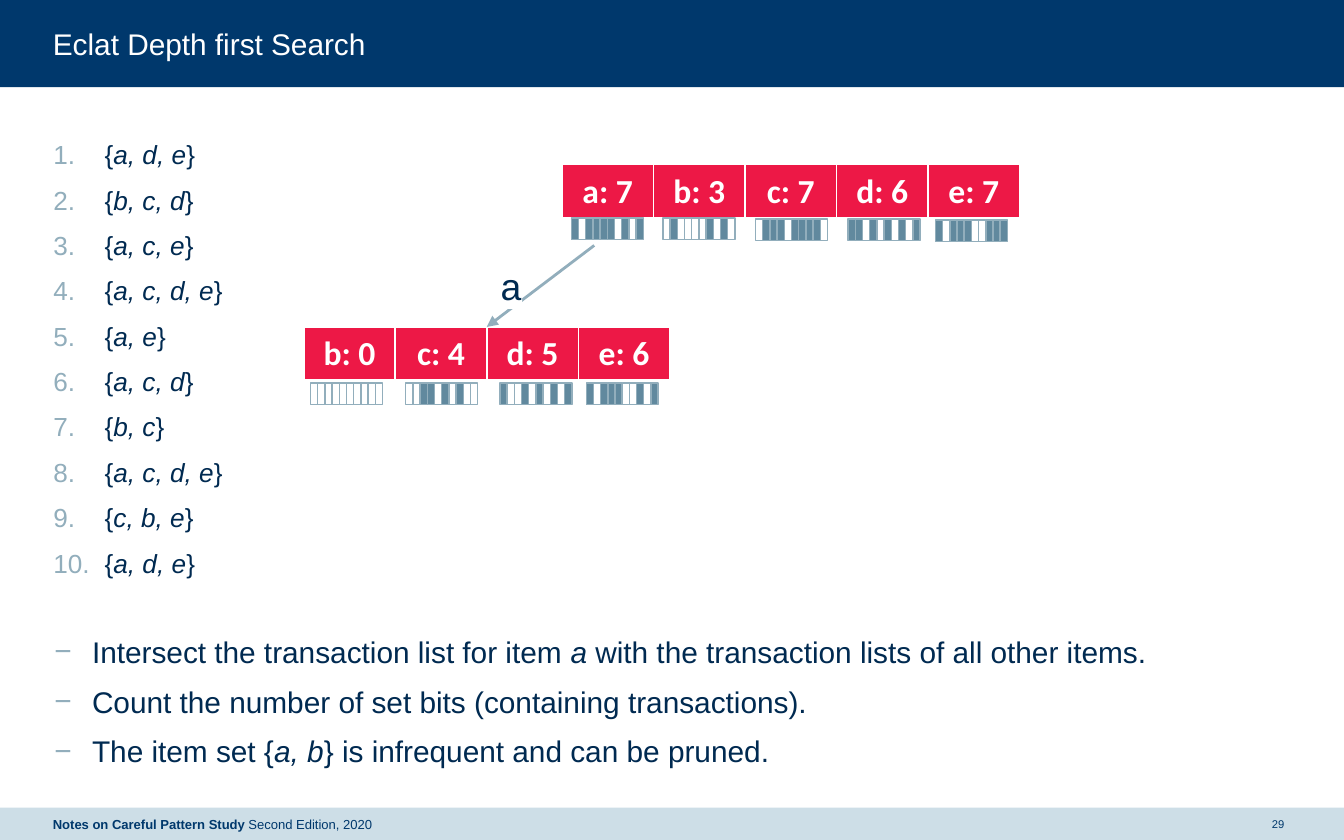
"""Build the slide on depth-first search with the Eclat algorithm."""
from lxml import etree
from pptx import Presentation
from pptx import util as u
from pptx.dml.color import RGBColor
from pptx.enum import shapes, text
from pptx.oxml import parse_xml
from pptx.oxml.ns import nsdecls, qn

NAVY = RGBColor(0x00, 0x38, 0x6C)
INK = RGBColor(0x00, 0x2A, 0x51)
PALE = RGBColor(0xCD, 0xDE, 0xE7)
STEEL = RGBColor(0x92, 0xAE, 0xBC)
BAR = RGBColor(0x61, 0x89, 0x9E)
RED = RGBColor(0xED, 0x18, 0x46)
WHITE = RGBColor(0xFF, 0xFF, 0xFF)

TRANSACTIONS = ["a, d, e", "b, c, d", "a, c, e", "a, c, d, e", "a, e",
                "a, c, d", "b, c", "a, c, d, e", "c, b, e", "a, d, e"]
REMARKS = [
    "Intersect the transaction list for item |a |with the transaction lists of all other items.",
    "Count the number of set bits (containing transactions).",
    "The item set {|a, b|} is infrequent and can be pruned.",
]
NUMBERED = {"mark": '<a:buAutoNum type="arabicPeriod" {}/>', "margin": u.Cm(0.97),
            "hanging": u.Cm(0.97), "size": u.Pt(14)}
DASHED = {"mark": '<a:buChar char="−" {}/>', "margin": u.Cm(0.73),
          "hanging": u.Cm(0.71), "size": u.Pt(16)}


def write(para, marked, color, accent="italic", **font):
    """Add text to a paragraph; parts between bars get the accent."""
    for index, part in enumerate(marked.split("|")):
        if not part:
            continue
        span = para.add_run()
        span.text = part
        span.font.color.rgb = color
        values = {"name": "Arial", **font}
        if index % 2:
            values[accent] = True
        for name, value in values.items():
            setattr(span.font, name, value)


def set_frame(shape, place, **values):
    """Place a text shape and format its frame without margins."""
    for name, value in zip(("left", "top", "width", "height"), place):
        setattr(shape, name, u.Cm(value))
    margins = {f"margin_{side}": 0 for side in ("left", "top", "right", "bottom")}
    for name, value in {"word_wrap": True, **margins, **values}.items():
        setattr(shape.text_frame, name, value)
    return shape.text_frame


deck = Presentation()
deck.slide_width, deck.slide_height = u.Cm(25.4), u.Cm(15.88)
page = deck.slides.add_slide(deck.slide_layouts[5])
title = page.shapes.title

for top, height, color in [(0, 1.65, NAVY), (15.27, 0.61, PALE)]:
    band = page.shapes.add_shape(shapes.MSO_SHAPE.RECTANGLE, 0, u.Cm(top),
                                 deck.slide_width, u.Cm(height))
    band.shadow.inherit = False
    band.fill.solid()
    band.fill.fore_color.rgb = color
    band.line.fill.background()
    title._element.addprevious(band._element)

frame = set_frame(title, (1, 0.48, 23.42, 0.69), vertical_anchor=text.MSO_ANCHOR.TOP)
frame.paragraphs[0].alignment = text.PP_ALIGN.LEFT
write(frame.paragraphs[0], "Eclat Depth first Search", WHITE, size=u.Pt(16))

footers = [
    ((1, 15.26, 11.15, 0.65), "|Notes on Careful Pattern Study |Second Edition, 2020",
     7, text.PP_ALIGN.LEFT),
    ((23.9, 15.26, 0.51, 0.65), "29", 6, text.PP_ALIGN.CENTER),
]
for place, words, size, alignment in footers:
    box = page.shapes.add_textbox(0, 0, 0, 0)
    frame = set_frame(box, place, vertical_anchor=text.MSO_ANCHOR.MIDDLE)
    frame.paragraphs[0].alignment = alignment
    write(frame.paragraphs[0], words, NAVY, "bold", size=u.Pt(size))

frame = set_frame(page.shapes.add_textbox(0, 0, 0, 0), (1.01, 2.62, 23.27, 11.86))
lines = [(f"{{|{items}|}}", NUMBERED) for items in TRANSACTIONS]
lines += [(remark, DASHED) for remark in REMARKS]
for index, (words, style) in enumerate(lines):
    para = frame.paragraphs[0] if index == 0 else frame.add_paragraph()
    para.space_before = u.Pt(29.5 if index == len(TRANSACTIONS) else 7.5)
    properties = para._p.get_or_add_pPr()
    properties.set("marL", str(style["margin"]))
    properties.set("indent", str(-style["hanging"]))
    properties.append(parse_xml(
        f'<a:buClr {nsdecls("a")}><a:srgbClr val="{STEEL}"/></a:buClr>'))
    properties.append(parse_xml(f'<a:buFont {nsdecls("a")} typeface="Arial"/>'))
    properties.append(parse_xml(style["mark"].format(nsdecls("a"))))
    write(para, words, INK, size=style["size"])

bits = {item: [item in items for items in TRANSACTIONS] for item in "abcde"}
shared = {item: [x and y for x, y in zip(bits["a"], bits[item])] for item in "bcde"}
levels = [
    (bits, 10.62, 3.11, [(10.8, 4.12), (12.53, 4.12), (14.28, 4.14), (16.03, 4.14), (17.68, 4.16)]),
    (shared, 5.74, 6.18, [(5.87, 7.24), (7.67, 7.24), (9.45, 7.24), (11.08, 7.24)]),
]
pitch = u.Cm(1.36) // 10
for level, left, top, strips in levels:
    table = page.shapes.add_table(1, len(level), u.Cm(left), u.Cm(top),
                                  u.Cm(1.73) * len(level), u.Cm(1.04)).table
    for column, (item, flags) in enumerate(level.items()):
        table.columns[column].width = u.Cm(1.73)
        cell = table.cell(0, column)
        para = cell.text_frame.paragraphs[0]
        para.alignment = text.PP_ALIGN.CENTER
        write(para, f"{item}: {sum(flags)}", WHITE, name="Calibri", size=u.Pt(18), bold=True)
        cell.fill.solid()
        cell.fill.fore_color.rgb = RED
        for place, (side, points) in enumerate([("L", 1), ("R", 1), ("T", 1), ("B", 3)]):
            cell._tc.tcPr.insert(place, parse_xml(
                f'<a:ln{side} {nsdecls("a")} w="{u.Pt(points)}"><a:solidFill>'
                f'<a:srgbClr val="{WHITE}"/></a:solidFill></a:ln{side}>'))

    for flags, (strip_left, strip_top) in zip(level.values(), strips):
        strip = page.shapes.add_group_shape()
        for index, flag in enumerate(flags):
            bit = strip.shapes.add_shape(
                shapes.MSO_SHAPE.RECTANGLE, u.Cm(strip_left) + index * pitch,
                u.Cm(strip_top), pitch, u.Cm(0.41))
            bit.shadow.inherit = False
            bit.line.color.rgb = STEEL
            bit.line.width = u.Pt(0.75)
            if flag:
                bit.fill.solid()
                bit.fill.fore_color.rgb = BAR
            else:
                bit.fill.background()

arrow = page.shapes.add_connector(shapes.MSO_CONNECTOR.STRAIGHT, u.Cm(11.23), u.Cm(4.64),
                                  u.Cm(9.2), u.Cm(6.18))
arrow.line.color.rgb = STEEL
arrow.line.width = u.Pt(1.5)
etree.SubElement(arrow.line._get_or_add_ln(), qn("a:tailEnd"), type="triangle")
etree.SubElement(arrow._element.spPr, qn("a:effectLst"))

label = page.shapes.add_textbox(0, 0, 0, 0)
frame = set_frame(label, (9.46, 4.98, 0.41, 0.86), word_wrap=False,
                  auto_size=text.MSO_AUTO_SIZE.SHAPE_TO_FIT_TEXT)
label.fill.solid()
label.fill.fore_color.rgb = WHITE
write(frame.paragraphs[0], "a", INK, size=u.Pt(20))

deck.save("out.pptx")
